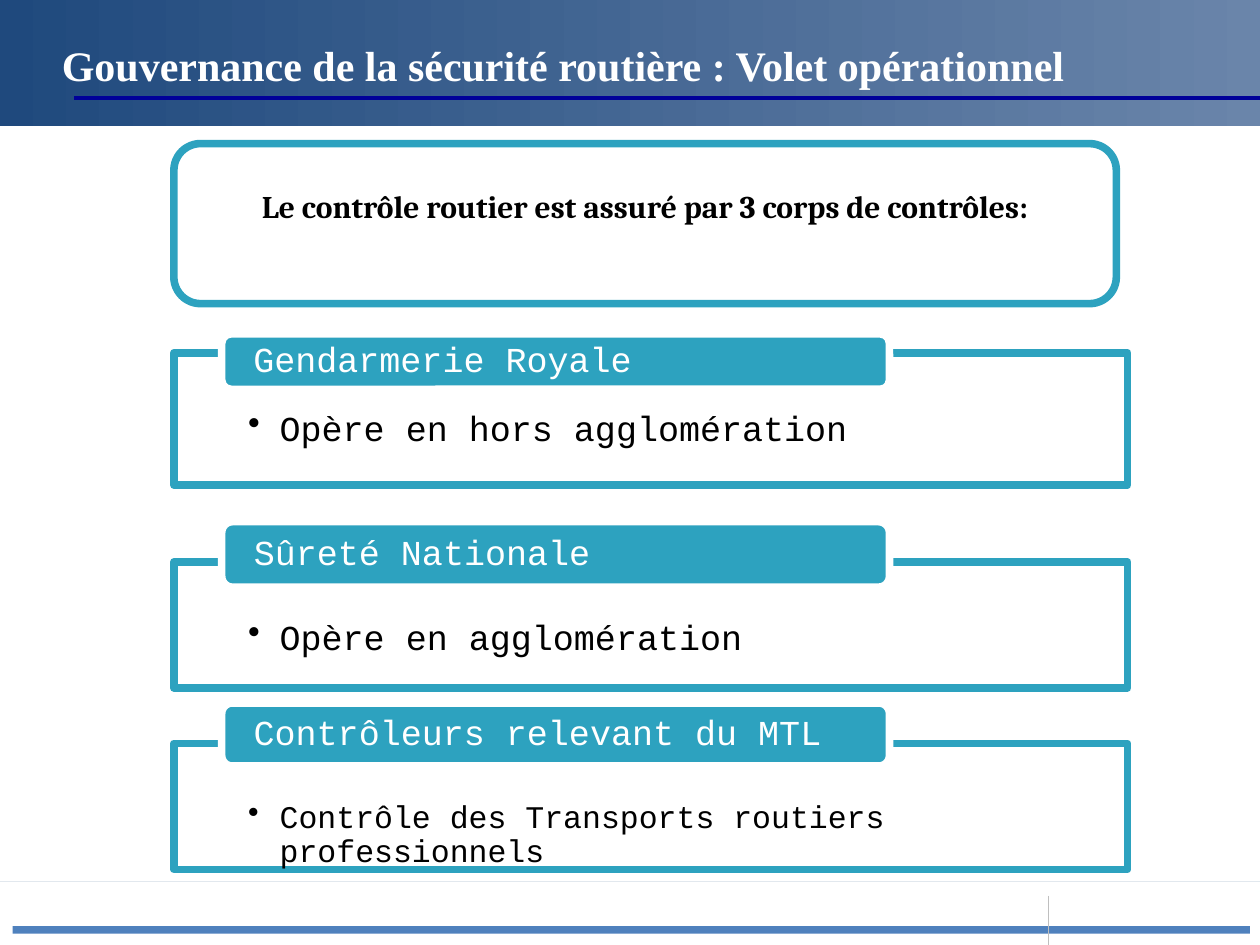
from dataclasses import dataclass

from lxml import etree
from pptx import Presentation
from pptx.dml.color import RGBColor
from pptx.enum.shapes import MSO_CONNECTOR, MSO_SHAPE
from pptx.enum.text import MSO_ANCHOR, MSO_AUTO_SIZE, PP_ALIGN
from pptx.oxml.ns import qn
from pptx.util import Inches, Pt

RECTANGLE = MSO_SHAPE.RECTANGLE
ROUNDED = MSO_SHAPE.ROUNDED_RECTANGLE
STRAIGHT = MSO_CONNECTOR.STRAIGHT
TOP, MIDDLE = MSO_ANCHOR.TOP, MSO_ANCHOR.MIDDLE
LEFT, CENTER = PP_ALIGN.LEFT, PP_ALIGN.CENTER
NO_AUTOFIT = MSO_AUTO_SIZE.NONE

COLORS = {
    "navy": "1F497D",
    "slate": "6A85AA",
    "blue": "4F81BD",
    "rule": "000099",
    "grey": "BFBFBF",
    "teal": "2DA2BF",
    "white": "FFFFFF",
    "black": "000000",
}
BORDER = 4.33
PANEL_LEFT, PANEL_WIDTH = 1.38, 7.57
TAB_LEFT, TAB_WIDTH = 1.76, 5.3


@dataclass(frozen=True)
class Corps:
    name: str
    mission: str
    mission_size: int
    panel_top: float
    panel_height: float
    tab_top: float
    tab_height: float


@dataclass(frozen=True)
class TextStyle:
    font: str
    size: int
    color: str
    bold: bool = False
    align: PP_ALIGN = LEFT
    anchor: MSO_ANCHOR = MIDDLE
    insets: tuple[float, float, float, float] = (0.1, 0.05, 0.1, 0.05)
    line_spacing: float = 1.0
    space_after: int = 0


CORPS = [
    Corps("Gendarmerie Royale", "Opère en hors agglomération", 20, 2.8, 1.05, 2.65, 0.44),
    Corps("Sûreté Nationale", "Opère en agglomération", 20, 4.46, 1.0, 4.14, 0.52),
    Corps("Contrôleurs relevant du MTL", "Contrôle des Transports routiers professionnels",
          18, 5.9, 1.0, 5.58, 0.5),
]


def rgb(name: str) -> RGBColor:
    return RGBColor.from_string(COLORS[name])


def write(shape, text: str, style: TextStyle):
    frame = shape.text_frame
    frame.text = text
    frame.word_wrap = True
    frame.auto_size = NO_AUTOFIT
    frame.vertical_anchor = style.anchor
    (frame.margin_left, frame.margin_top,
     frame.margin_right, frame.margin_bottom) = map(Inches, style.insets)
    paragraph = frame.paragraphs[0]
    paragraph.alignment = style.align
    paragraph.line_spacing = style.line_spacing
    paragraph.space_after = Pt(style.space_after)
    font = paragraph.runs[0].font
    font.name, font.size, font.bold = style.font, Pt(style.size), style.bold
    font.color.rgb = rgb(style.color)
    return paragraph


def add_bullet(paragraph) -> None:
    properties = paragraph._p.get_or_add_pPr()
    properties.set("marL", str(Inches(0.25)))
    properties.set("indent", str(Inches(-0.25)))
    etree.SubElement(properties, qn("a:buChar")).set("char", "•")


def add_box(slide, kind: MSO_SHAPE, left: float, top: float, width: float, height: float,
            fill: str, border: str | None = None):
    box = slide.shapes.add_shape(kind, Inches(left), Inches(top), Inches(width), Inches(height))
    box.shadow.inherit = False
    box.fill.solid()
    box.fill.fore_color.rgb = rgb(fill)
    if border:
        box.line.color.rgb = rgb(border)
        box.line.width = Pt(BORDER)
    else:
        box.line.fill.background()
    return box


def add_band(slide, points: list[tuple[float, float]]):
    start, *others = points
    builder = slide.shapes.build_freeform(*start, scale=Inches(1))
    builder.add_line_segments(others, close=True)
    band = builder.convert_to_shape()
    band.shadow.inherit = False
    band.line.fill.background()
    return band


def add_rule(slide, start: tuple[float, float], end: tuple[float, float],
             color: str, width: float) -> None:
    rule = slide.shapes.add_connector(STRAIGHT, *map(Inches, start + end))
    rule.line.color.rgb = rgb(color)
    rule.line.width = Pt(width)
    etree.SubElement(rule._element.spPr, qn("a:effectLst"))


def add_decor(slide) -> None:
    footer = add_band(slide, [(0.1, 7.4), (9.92, 7.39), (9.91, 7.26),
                              (2.67, 7.26), (2.39, 7.1), (0.1, 7.1)])
    footer.fill.solid()
    footer.fill.fore_color.rgb = rgb("navy")

    header = add_band(slide, [(9.92, 0.08), (0.13, 0.08), (0.13, 0.89),
                              (7.46, 0.89), (7.64, 0.99), (9.92, 0.99)])
    header.fill.gradient()
    header.fill.gradient_angle = 0
    for stop, color in zip(header.fill.gradient_stops, ("navy", "slate")):
        stop.color.rgb = rgb(color)

    add_box(slide, RECTANGLE, 0.1, 7.35, 9.82, 0.06, "blue")
    add_rule(slide, (8.32, 7.11), (8.32, 7.5), "grey", 0.75)
    add_rule(slide, (0.59, 0.78), (10, 0.78), "rule", 2.25)


def add_corps(slide, corps: Corps) -> None:
    panel = add_box(slide, RECTANGLE, PANEL_LEFT, corps.panel_top, PANEL_WIDTH,
                    corps.panel_height, "white", "teal")
    mission_style = TextStyle("Courier New", corps.mission_size, "black", anchor=TOP,
                              insets=(0.59, 0.46, 0.59, 0.16), line_spacing=0.9, space_after=4)
    add_bullet(write(panel, corps.mission, mission_style))

    tab = add_box(slide, ROUNDED, TAB_LEFT, corps.tab_top, TAB_WIDTH,
                  corps.tab_height, "teal", "white")
    write(tab, corps.name, TextStyle("Courier New", 20, "white",
                                     insets=(0.23, 0.03, 0.23, 0.03), line_spacing=0.9))


def main() -> None:
    deck = Presentation()
    deck.slide_width, deck.slide_height = Inches(10), Inches(7.5)
    slide = deck.slides.add_slide(deck.slide_layouts[5])
    add_decor(slide)

    intro = add_box(slide, ROUNDED, PANEL_LEFT, 1.14, 7.48, 1.27, "white", "teal")
    write(intro, "Le contrôle routier est assuré par 3 corps de contrôles:",
          TextStyle("Cambria", 18, "black", bold=True, align=CENTER,
                    insets=(0.1, 0.05, 0.1, 0.33)))

    for corps in CORPS:
        add_corps(slide, corps)

    title = slide.shapes.title
    title.left, title.top, title.width, title.height = map(Inches, (0.39, 0.16, 8.63, 0.7))
    write(title, "Gouvernance de la sécurité routière : Volet opérationnel",
          TextStyle("Times New Roman", 24, "white", bold=True))
    tree = slide.shapes._spTree
    tree.append(title._element)

    deck.save("out.pptx")


if __name__ == "__main__":
    main()
